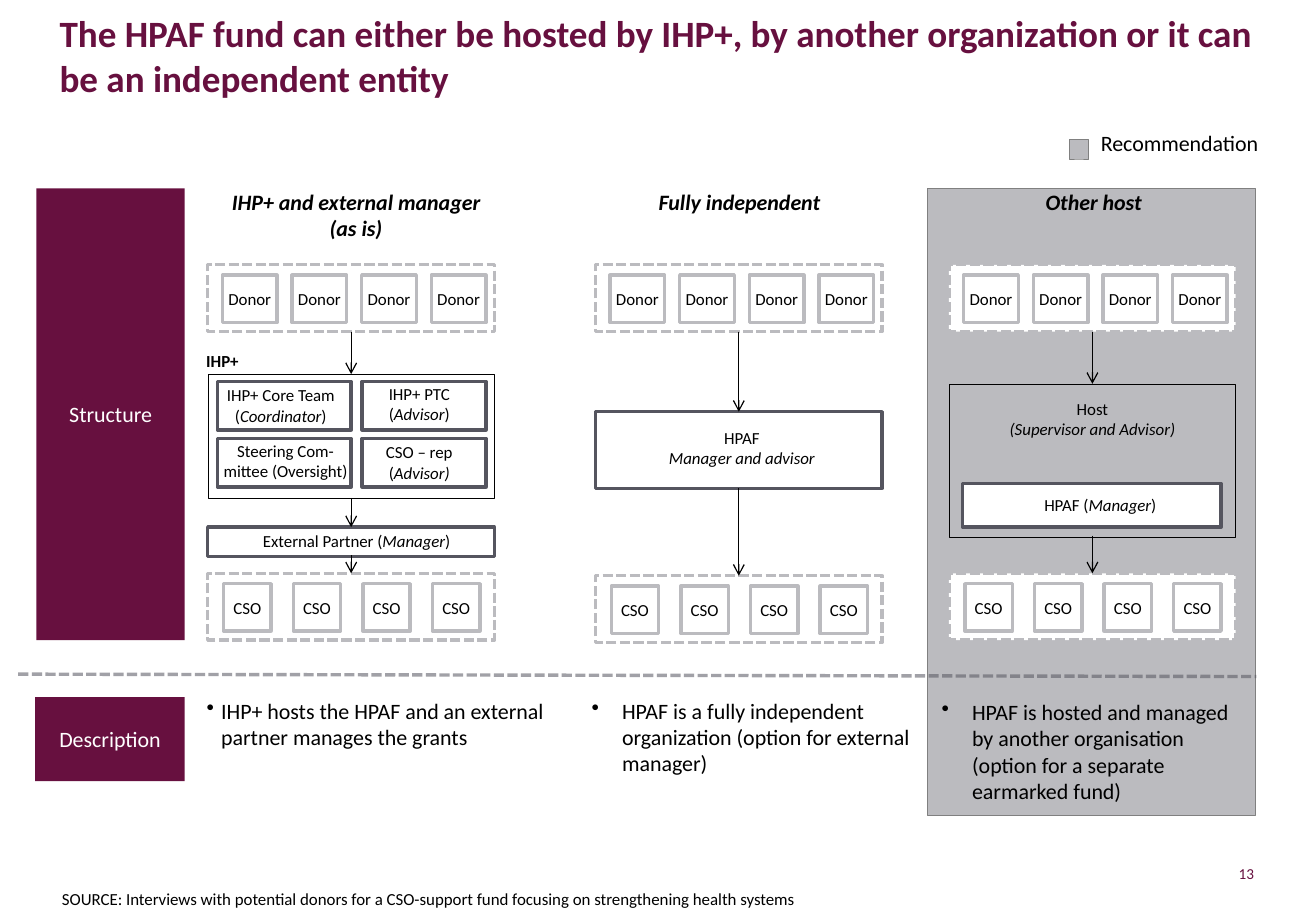
from pptx import Presentation
from pptx.dml.color import RGBColor
from pptx.enum import dml, shapes, text
from pptx.oxml.xmlchemy import OxmlElement
from pptx.util import Inches, Pt

PLUM, GREY, SLATE, MID = "67103F", "BBBBBF", "55555F", "808080"
BLACK, WHITE = "000000", "FFFFFF"
LEFT, CENTER, RIGHT = text.PP_ALIGN.LEFT, text.PP_ALIGN.CENTER, text.PP_ALIGN.RIGHT
TOP, MIDDLE, BOTTOM = text.MSO_ANCHOR.TOP, text.MSO_ANCHOR.MIDDLE, text.MSO_ANCHOR.BOTTOM
NO_INSET, CELL_INSET, TEXT_INSET = (0, 0), (0.04, 0.05), (0.1, 0.05)

TITLE = ("The HPAF fund can either be hosted by IHP+, by another organization "
         "or it can be an independent entity")
SOURCE = ("SOURCE: Interviews with potential donors for a CSO-support fund "
          "focusing on strengthening health systems")
SIDE_LABELS = [("Structure", (0.3, 1.55, 1.22, 3.72)),
               ("Description", (0.29, 5.74, 1.23, 0.69))]

# Column left edge, CSO row top, vertical arrows as (from, to)
COLUMN_W = 2.36
COLUMNS = [
    (1.71, 4.72, [(2.73, 3.08), (4.1, 4.34), (4.57, 4.72)]),
    (4.9, 4.74, [(2.73, 3.39), (4.02, 4.74)]),
    (7.81, 4.72, [(2.73, 3.16), (4.41, 4.72)]),
]
HEADINGS = [
    (["IHP+ and external manager", "(as is)"], (1.75, 1.55, 2.36, 0.24)),
    (["Fully independent"], (5.16, 1.55, 1.85, 0.21)),
    (["Other host"], (7.82, 1.55, 2.36, 0.24)),
]
DESCRIPTIONS = [
    ("IHP+ hosts the HPAF and an external partner manages the grants",
     (1.57, 5.74, 2.9, 0.24), 0.12),
    ("HPAF is a fully independent organization (option for external manager)",
     (4.87, 5.74, 2.76, 0.15), 0.25),
    ("HPAF is hosted and managed by another organisation "
     "(option for a separate earmarked fund)", (7.75, 5.75, 2.45, 0.2), 0.25),
]
# Box, fill, line colour, line width
FRAMES = [
    ((1.71, 3.08, 2.36, 1.02), None, BLACK, 0.25),
    ((7.81, 3.16, 2.36, 1.26), None, BLACK, 0.25),
    ((4.9, 3.39, 2.36, 0.63), WHITE, SLATE, 2),
    ((1.71, 4.34, 2.36, 0.24), WHITE, SLATE, 2),
    ((7.92, 3.98, 2.13, 0.36), WHITE, SLATE, 2),
] + [((x, y, w, 0.4), None, SLATE, 2)
     for y in (3.14, 3.61) for x, w in ((1.79, 1.1), (2.98, 1.02))]
# Asterisks enclose italics
FRAME_LABELS = [
    (["IHP+ Core Team (*Coordinator*)"], (1.72, 3.12, 1.18, 0.44)),
    (["IHP+ PTC", "(*Advisor*)"], (2.74, 3.11, 1.42, 0.44)),
    (["Steering Com-mittee (Oversight)"], (1.72, 3.58, 1.26, 0.44)),
    (["CSO – rep", "(*Advisor)*"], (2.74, 3.59, 1.42, 0.44)),
    (["External Partner (*Manager*)"], (1.95, 4.32, 1.97, 0.27)),
    (["HPAF", "*Manager and advisor*"], (5.04, 3.47, 2.13, 0.44)),
    (["Host", "*(Supervisor and Advisor)*"], (7.85, 3.23, 2.28, 0.44)),
    (["HPAF (*Manager*)"], (8.07, 4.02, 1.97, 0.27)),
]


def rgb(color):
    return RGBColor.from_string(color)


def inches(box):
    return [Inches(v) for v in box]


def write(sp, lines, size, color=BLACK, align=LEFT, anchor=TOP, inset=NO_INSET,
          bold=False, italic=False):
    tf = sp.text_frame
    tf.word_wrap = True
    tf.auto_size = text.MSO_AUTO_SIZE.NONE
    tf.vertical_anchor = anchor
    tf.margin_left = tf.margin_right = Inches(inset[0])
    tf.margin_top = tf.margin_bottom = Inches(inset[1])
    for i, line in enumerate(lines):
        p = tf.add_paragraph() if i else tf.paragraphs[0]
        p.alignment = align
        p.space_before = Pt(0)
        for j, piece in enumerate(line.split("*")):
            if piece:
                r = p.add_run()
                r.text = piece
                r.font.name, r.font.size = "Calibri", Pt(size)
                r.font.bold, r.font.italic = bold, italic or j % 2 == 1
                r.font.color.rgb = rgb(color)


def add_text(box, lines, size, **style):
    sp = s.shapes.add_textbox(*inches(box))
    write(sp, lines, size, **style)
    return sp


def add_box(parent, box, fill=None, line=None, width=0.25, dashed=False):
    sp = parent.add_shape(shapes.MSO_SHAPE.RECTANGLE, *inches(box))
    sp.shadow.inherit = False
    if fill:
        sp.fill.solid()
        sp.fill.fore_color.rgb = rgb(fill)
    else:
        sp.fill.background()
    if line:
        sp.line.color.rgb = rgb(line)
        sp.line.width = Pt(width)
    else:
        sp.line.fill.background()
    if dashed:
        sp.line.dash_style = dml.MSO_LINE.SQUARE_DOT
    return sp


def add_line(x1, y1, x2, y2, color, width):
    cx = s.shapes.add_connector(shapes.MSO_CONNECTOR.STRAIGHT, *inches((x1, y1, x2, y2)))
    cx.line.color.rgb = rgb(color)
    cx.line.width = Pt(width)
    cx._element.spPr.append(OxmlElement("a:effectLst"))
    return cx


def add_arrow(x, y1, y2):
    ln = add_line(x, y1, x, y2, BLACK, 0.75).line._get_or_add_ln()
    tail = OxmlElement("a:tailEnd")
    tail.set("type", "arrow")
    ln.append(tail)


def add_row(left, top, label, inset, cell_w):
    """Dashed frame holding four equal cells."""
    group = s.shapes.add_group_shape().shapes
    add_box(group, (left, top, COLUMN_W, 0.55), WHITE, GREY, 2, dashed=True)
    for i in range(4):
        cell = add_box(group, (left + inset + i * 0.573, top + 0.085, cell_w, 0.39),
                       WHITE, GREY, 2)
        write(cell, [label], 10, align=CENTER, anchor=MIDDLE, inset=CELL_INSET)


def set_bullet(p, hang):
    pPr = p._p.get_or_add_pPr()
    pPr.set("marL", str(Inches(0.25)))
    pPr.set("indent", str(-Inches(hang)))
    bullet = OxmlElement("a:buChar")
    bullet.set("char", "•")
    pPr.append(bullet)


def fill_placeholder(sp, box, line, size, **style):
    sp.left, sp.top, sp.width, sp.height = inches(box)
    write(sp, [line], size, anchor=BOTTOM, **style)


prs = Presentation()
prs.slide_width, prs.slide_height = Inches(10.83), Inches(7.5)
s = prs.slides.add_slide(prs.slide_layouts[1])

add_box(s.shapes, (7.63, 1.55, 2.7, 5.16), GREY, MID)
fill_placeholder(s.shapes.title, (0.49, 0.15, 9.85, 0.67), TITLE, 22, color=PLUM, bold=True)
body = s.placeholders[1]
fill_placeholder(body, (0.51, 7.06, 8.93, 0.42), SOURCE, 10)
pPr = body.text_frame.paragraphs[0]._p.get_or_add_pPr()
pPr.set("marL", "0")
pPr.set("indent", "0")
pPr.append(OxmlElement("a:buNone"))

for label, box in SIDE_LABELS:
    write(add_box(s.shapes, box, PLUM), [label], 13, color=WHITE, align=CENTER,
          anchor=MIDDLE, inset=TEXT_INSET)
for lines, box in HEADINGS:
    add_text(box, lines, 13, align=CENTER, bold=True, italic=True)
for box, fill, line, width in FRAMES:
    add_box(s.shapes, box, fill, line, width)
for lines, box in FRAME_LABELS:
    add_text(box, lines, 10, align=CENTER, inset=TEXT_INSET)
add_text((1.24, 2.84, 1.18, 0.27), ["IHP+"], 10, align=CENTER, inset=TEXT_INSET, bold=True)

for left, cso_top, arrows in COLUMNS:
    add_row(left, 2.18, "Donor", 0.12, 0.45)
    add_row(left, cso_top, "CSO", 0.13, 0.39)
    for y1, y2 in arrows:
        add_arrow(left + COLUMN_W / 2, y1, y2)

divider = add_line(0.15, 5.55, 10.34, 5.57, SLATE, 0)
divider.line.dash_style = dml.MSO_LINE.SQUARE_DOT
alpha = OxmlElement("a:alpha")
alpha.set("val", "55000")
divider.line._get_or_add_ln().find(".//{*}srgbClr").append(alpha)

for line, box, hang in DESCRIPTIONS:
    sp = add_text(box, [line], 13)
    set_bullet(sp.text_frame.paragraphs[0], hang)

add_box(s.shapes, (8.8, 1.15, 0.16, 0.16), GREY, MID)
add_text((9.06, 1.07, 1.56, 0.09), ["Recommendation"], 13)
add_text((9.53, 7.03, 0.79, 0.32), ["13"], 9, color=PLUM, align=RIGHT, anchor=MIDDLE)

prs.save("out.pptx")
